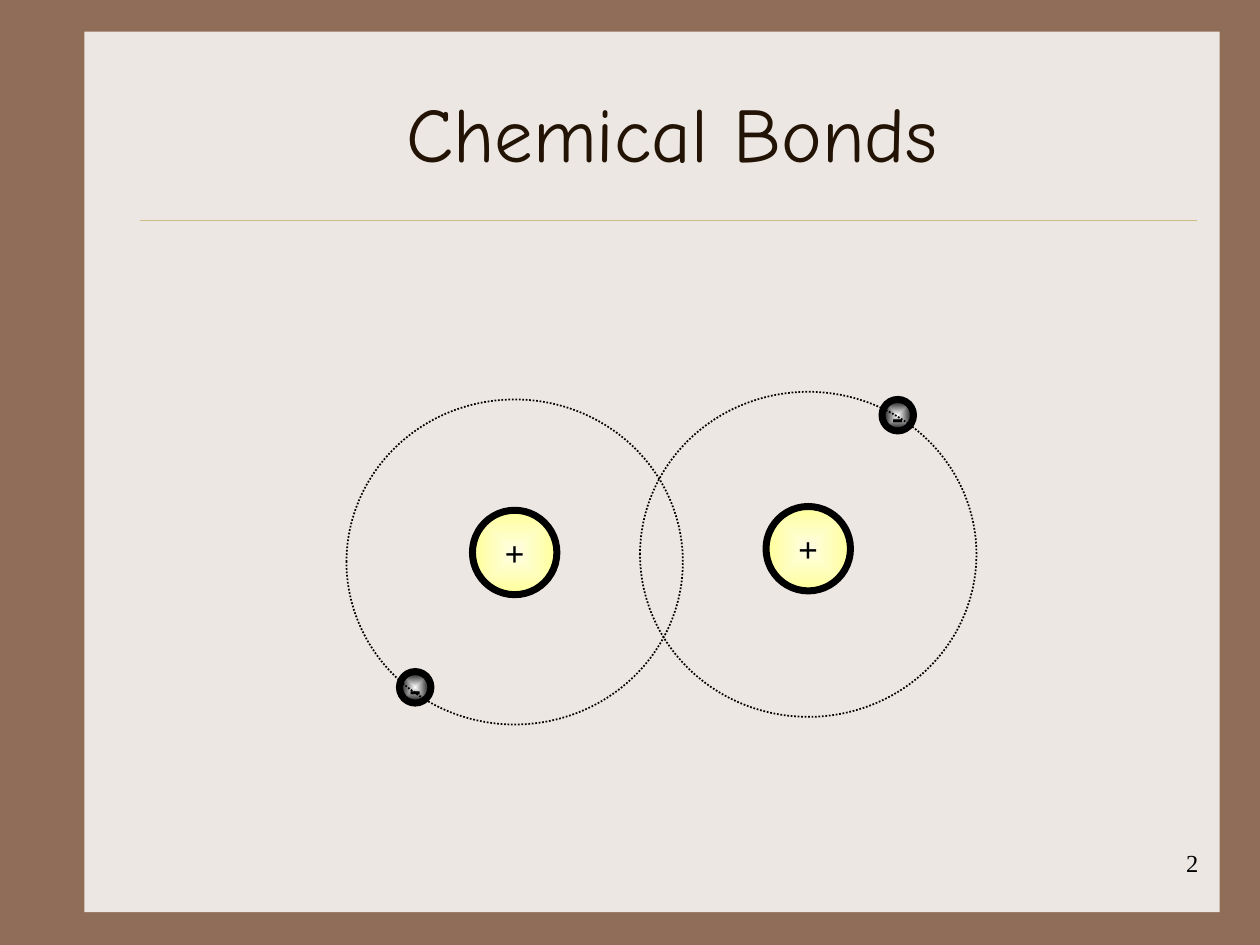
from dataclasses import dataclass
from lxml.etree import SubElement
from pptx import Presentation
from pptx.dml.color import RGBColor
from pptx.enum.dml import MSO_LINE
from pptx.enum.shapes import MSO_CONNECTOR, MSO_SHAPE
from pptx.enum.text import MSO_ANCHOR, PP_ALIGN
from pptx.oxml.ns import qn
from pptx.shapes.autoshape import Shape
from pptx.slide import Slide
from pptx.text.text import TextFrame
from pptx.util import Inches, Pt


@dataclass(frozen=True)
class Theme:
    frame: str = "906D58"
    panel: str = "EDE7E3"
    rule: str = "CBBD83"
    title: str = "221304"
    ink: str = "000000"
    nucleus: tuple[str, str] = ("FEFDE3", "FFFF99")
    electron: tuple[str, str] = ("FFFFFF", "000000")
    title_font: str = "Comic Neue"
    body_font: str = "Times New Roman"
    title_size: int = 44
    charge_size: int = 20
    number_size: int = 14


@dataclass(frozen=True)
class Particle:
    left: float
    top: float
    size: float
    charge: str
    colors: tuple[str, str]


@dataclass(frozen=True)
class Atom:
    nucleus: Particle
    electron: Particle
    orbit_left: float
    orbit_top: float


THEME = Theme()
ORBIT_WIDTH, ORBIT_HEIGHT = 2.67, 2.58


def rgb(value: str) -> RGBColor:
    return RGBColor.from_string(value)


def nucleus(left: float, top: float) -> Particle:
    return Particle(left, top, 0.67, "+", THEME.nucleus)


def electron(left: float, top: float) -> Particle:
    return Particle(left, top, 0.25, "-", THEME.electron)


ATOMS = [
    Atom(nucleus(3.75, 4.05), electron(3.17, 5.33), 2.75, 3.17),
    Atom(nucleus(6.08, 4.02), electron(7, 3.17), 5.08, 3.11),
]


def set_text(tf: TextFrame, text: str, font: str, size: int, color: str,
             align: PP_ALIGN, bold: bool = False) -> None:
    tf.text = text
    p = tf.paragraphs[0]
    p.alignment = align
    r = p.runs[0]
    r.font.name = font
    r.font.size = Pt(size)
    r.font.bold = bold
    r.font.color.rgb = rgb(color)


def add_shape(s: Slide, kind: MSO_SHAPE, left: float, top: float,
              width: float, height: float) -> Shape:
    sp = s.shapes.add_shape(kind, Inches(left), Inches(top), Inches(width), Inches(height))
    sp.shadow.inherit = False
    return sp


def fill_radial(sp: Shape, colors: tuple[str, str]) -> None:
    sp.fill.gradient()
    for stop, position, color in zip(sp.fill.gradient_stops, (0, 1), colors):
        stop.position = position
        stop.color.rgb = rgb(color)
    grad = sp.element.spPr.find(qn("a:gradFill"))
    grad.remove(grad.find(qn("a:lin")))
    path = SubElement(grad, qn("a:path"), {"path": "shape"})
    SubElement(path, qn("a:fillToRect"), dict.fromkeys("ltrb", "50000"))


def draw_particle(s: Slide, item: Particle) -> None:
    sp = add_shape(s, MSO_SHAPE.OVAL, item.left, item.top, item.size, item.size)
    fill_radial(sp, item.colors)
    sp.line.color.rgb = rgb(THEME.ink)
    sp.line.width = Pt(4)
    tf = sp.text_frame
    tf.word_wrap = False
    tf.vertical_anchor = MSO_ANCHOR.MIDDLE
    set_text(tf, item.charge, THEME.body_font, THEME.charge_size, THEME.ink,
             PP_ALIGN.CENTER, bold=True)


def draw_atom(s: Slide, atom: Atom) -> None:
    draw_particle(s, atom.nucleus)
    draw_particle(s, atom.electron)
    orbit = add_shape(s, MSO_SHAPE.OVAL, atom.orbit_left, atom.orbit_top,
                      ORBIT_WIDTH, ORBIT_HEIGHT)
    orbit.fill.background()
    orbit.line.color.rgb = rgb(THEME.ink)
    orbit.line.width = Pt(1)
    orbit.line.dash_style = MSO_LINE.ROUND_DOT


def draw_backdrop(s: Slide) -> None:
    s.background.fill.solid()
    s.background.fill.fore_color.rgb = rgb(THEME.frame)
    panel = add_shape(s, MSO_SHAPE.RECTANGLE, 0.67, 0.25, 9.01, 6.99)
    panel.fill.solid()
    panel.fill.fore_color.rgb = rgb(THEME.panel)
    panel.line.fill.background()
    rule = s.shapes.add_connector(MSO_CONNECTOR.STRAIGHT, Inches(1.11), Inches(1.75),
                                  Inches(9.5), Inches(1.75))
    rule.line.color.rgb = rgb(THEME.rule)
    rule.line.width = Pt(0.25)
    SubElement(rule.element.spPr, qn("a:effectLst"))


def draw_title(s: Slide, text: str) -> None:
    title = s.shapes.title
    title.element.getparent().append(title.element)
    title.left, title.top = Inches(1.17), Inches(0.42)
    title.width, title.height = Inches(8.33), Inches(1.25)
    title.text_frame.vertical_anchor = MSO_ANCHOR.MIDDLE
    set_text(title.text_frame, text, THEME.title_font, THEME.title_size,
             THEME.title, PP_ALIGN.CENTER)


def draw_number(s: Slide, text: str) -> None:
    box = s.shapes.add_textbox(Inches(7.53), Inches(6.68), Inches(2.08), Inches(0.5))
    box.text_frame.word_wrap = True
    set_text(box.text_frame, text, THEME.body_font, THEME.number_size,
             THEME.ink, PP_ALIGN.RIGHT)


def main() -> None:
    prs = Presentation()
    prs.slide_width, prs.slide_height = Inches(10), Inches(7.5)
    s = prs.slides.add_slide(prs.slide_layouts[5])
    draw_backdrop(s)
    draw_title(s, "Chemical Bonds")
    for atom in ATOMS:
        draw_atom(s, atom)
    draw_number(s, "2")
    prs.save("out.pptx")


if __name__ == "__main__":
    main()
